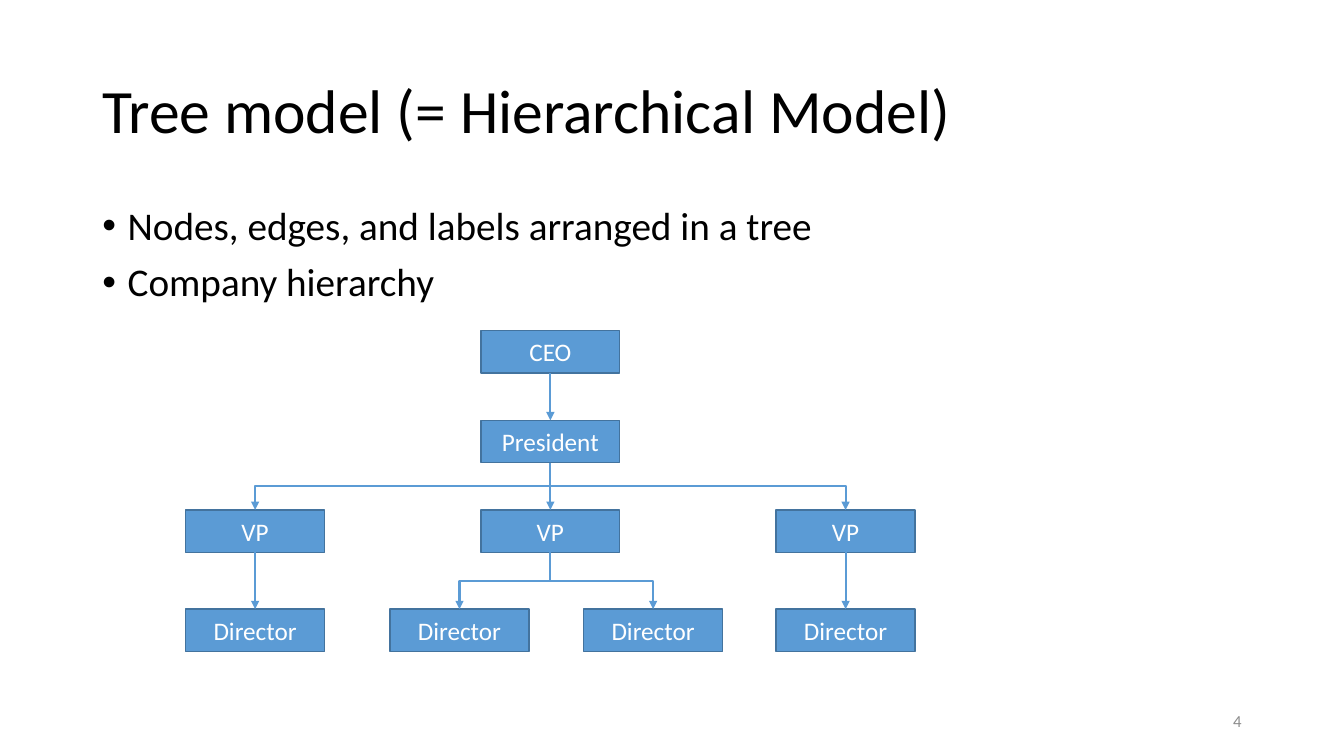
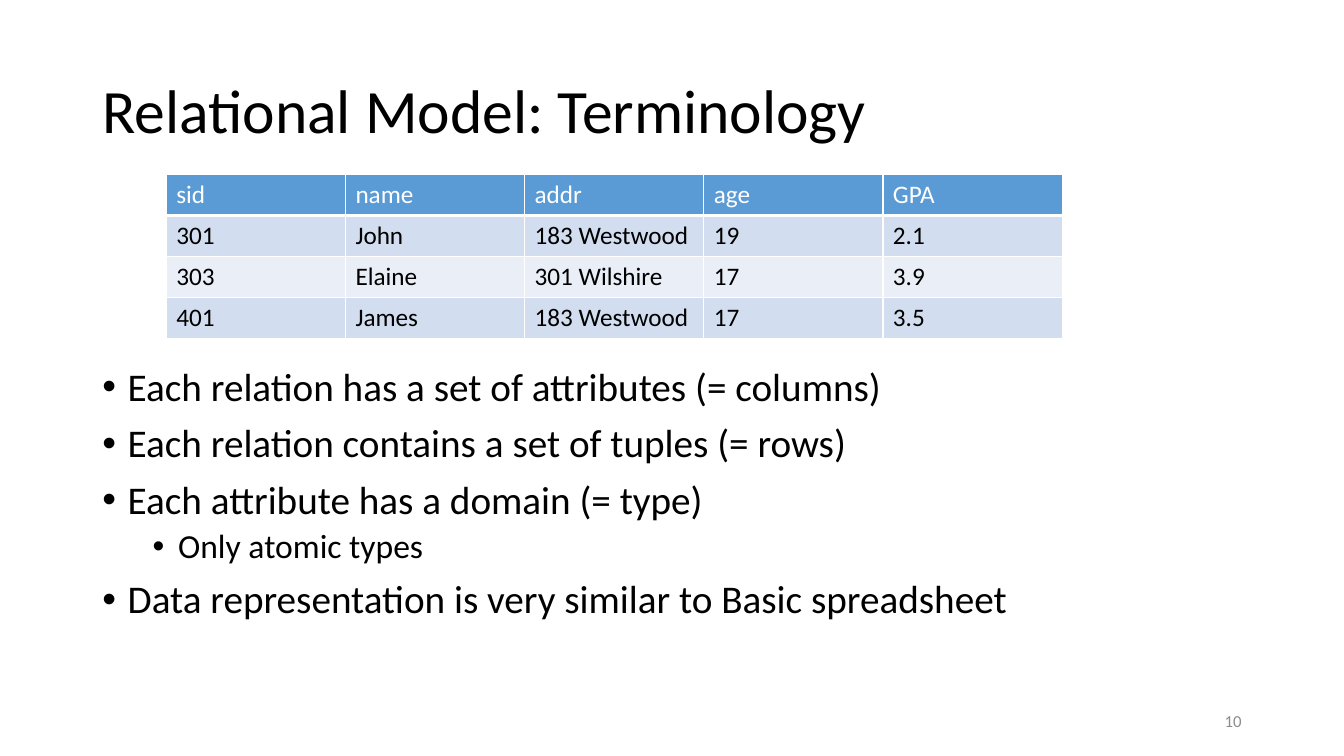
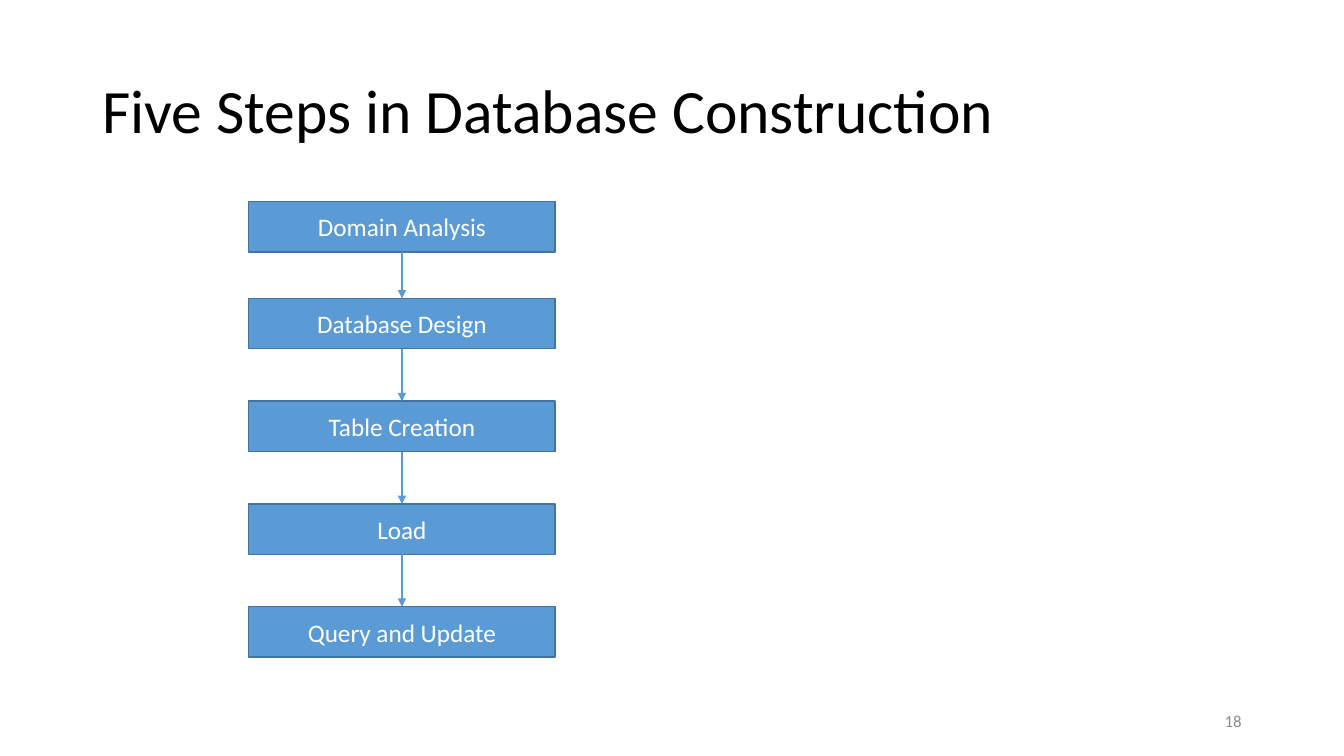
from lxml import etree
from pptx import Presentation
from pptx import util as u
from pptx.dml import color
from pptx.enum import shapes, text
from pptx.oxml import ns

HUES = {"ink": "000000", "blue": "5B9BD5", "edge": "43739E", "white": "FFFFFF",
        "gray": "8C8C8C", "band": "D2DEEF", "pale": "EAEFF7"}
FONT = "Calibri"


def put(para, words, size, hue):
    run = para.add_run()
    run.text = words
    run.font.name = FONT
    run.font.size = u.Pt(size)
    run.font.bold = False
    run.font.color.rgb = color.RGBColor.from_string(HUES[hue])


def add(node, tag, **attrs):
    return etree.SubElement(node, ns.qn(tag), **attrs)


deck = Presentation()
deck.slide_width, deck.slide_height = u.Cm(33.87), u.Cm(19.05)
LEFT, WIDE = u.Cm(2.33), u.Cm(29.21)

pages = [
    ("Tree model (= Hierarchical Model)", "4", 5.08, [
        (0, "Nodes, edges, and labels arranged in a tree"),
        (0, "Company hierarchy")]),
    ("Relational Model: Terminology", "10", 9.14, [
        (0, "Each relation has a set of attributes (= columns)"),
        (0, "Each relation contains a set of tuples (= rows)"),
        (0, "Each attribute has a domain (= type)"),
        (1, "Only atomic types"),
        (0, "Data representation is very similar to Basic spreadsheet")]),
    ("Five Steps in Database Construction", "18", 5.08, []),
]
for title, number, top, points in pages:
    slide = deck.slides.add_slide(deck.slide_layouts[6])
    head = slide.shapes.add_textbox(LEFT, u.Cm(1.02), WIDE, u.Cm(3.68)).text_frame
    head.word_wrap = True
    head.vertical_anchor = text.MSO_ANCHOR.MIDDLE
    head.paragraphs[0].line_spacing = 0.9
    put(head.paragraphs[0], title, 44, "ink")

    foot = slide.shapes.add_textbox(u.Cm(23.92), u.Cm(17.65), u.Cm(7.62), u.Cm(1.01)).text_frame
    foot.word_wrap = True
    foot.vertical_anchor = text.MSO_ANCHOR.MIDDLE
    foot.paragraphs[0].alignment = text.PP_ALIGN.RIGHT
    put(foot.paragraphs[0], number, 12, "gray")

    if points:
        body = slide.shapes.add_textbox(LEFT, u.Cm(top), WIDE, u.Cm(17.17 - top)).text_frame
        body.word_wrap = True
    for i, (level, words) in enumerate(points):
        para = body.add_paragraph() if i else body.paragraphs[0]
        para.level = level
        para.line_spacing = 0.9
        para.space_before = u.Pt(5 if level else 10)
        props = para._p.get_or_add_pPr()
        props.set("marL", str(u.Cm(0.64 + 1.27 * level)))
        props.set("indent", str(-u.Cm(0.64)))
        add(props, "a:buFont", typeface="Arial")
        add(props, "a:buChar", char="•")
        put(para, words, 24 if level else 28, "ink")

tree = [
    ("CEO", 13.87, 8.33, None),
    ("President", 13.87, 10.59, 0),
    ("VP", 6.43, 12.85, 1),
    ("VP", 13.87, 12.85, 1),
    ("VP", 21.31, 12.85, 1),
    ("Director", 6.43, 15.35, 2),
    ("Director", 11.58, 15.35, 3),
    ("Director", 16.46, 15.35, 3),
    ("Director", 21.31, 15.35, 4),
]
steps = [
    ("Domain Analysis", 10.13, 5.08, None),
    ("Database Design", 10.13, 7.52, 0),
    ("Table Creation", 10.13, 10.11, 1),
    ("Load", 10.13, 12.7, 2),
    ("Query and Update", 10.13, 15.29, 3),
]
for slide, nodes, wide, high in [(deck.slides[0], tree, 3.5, 1.07),
                                 (deck.slides[2], steps, 7.72, 1.27)]:
    boxes = []
    for words, mid, top, parent in nodes:
        box = slide.shapes.add_shape(shapes.MSO_SHAPE.RECTANGLE, u.Cm(mid - wide / 2),
                                     u.Cm(top), u.Cm(wide), u.Cm(high))
        box.shadow.inherit = False
        box.fill.solid()
        box.fill.fore_color.rgb = color.RGBColor.from_string(HUES["blue"])
        box.line.color.rgb = color.RGBColor.from_string(HUES["edge"])
        box.line.width = u.Pt(1)
        box.text_frame.vertical_anchor = text.MSO_ANCHOR.MIDDLE
        box.text_frame.paragraphs[0].alignment = text.PP_ALIGN.CENTER
        put(box.text_frame.paragraphs[0], words, 18, "white")
        boxes.append(box)
        if parent is None:
            continue

        boss = boxes[parent]
        start, end = boss.left + boss.width // 2, box.left + box.width // 2
        low = boss.top + boss.height
        if mid == nodes[parent][1]:
            link = slide.shapes.add_connector(shapes.MSO_CONNECTOR.STRAIGHT,
                                              start, low, end, box.top)
            link.begin_connect(boss, 2)
            link.end_connect(box, 0)
        else:
            side = 1 if end > start else -1
            midx, midy = (start + end) // 2, (low + box.top) // 2
            dx, dy = abs(end - start) // 2, (box.top - low) // 2
            link = slide.shapes.add_connector(shapes.MSO_CONNECTOR.ELBOW,
                                              midx + side * dy, midy - dx,
                                              midx - side * dy, midy + dx)
            turn = 270 if side > 0 else 90
            link._element.spPr.get_or_add_xfrm().set("rot", str(turn * 60000))
        link.line.color.rgb = color.RGBColor.from_string(HUES["blue"])
        link.line.width = u.Pt(1.5)
        add(link.line._get_or_add_ln(), "a:tailEnd", type="triangle")
        add(link._element.spPr, "a:effectLst")

rows = [
    ("sid", "name", "addr", "age", "GPA"),
    ("301", "John", "183 Westwood", "19", "2.1"),
    ("303", "Elaine", "301 Wilshire", "17", "3.9"),
    ("401", "James", "183 Westwood", "17", "3.5"),
]
grid = deck.slides[1].shapes.add_table(len(rows), len(rows[0]), u.Cm(4.19), u.Cm(4.4),
                                       u.Cm(22.58), u.Cm(4.12)).table
for r, row in enumerate(rows):
    for c, words in enumerate(row):
        cell = grid.cell(r, c)
        props = cell._tc.get_or_add_tcPr()
        for side in "LRTB":
            thick = 3 if r == 0 and side == "B" else 1
            line = add(props, "a:ln" + side, w=str(u.Pt(thick)))
            add(add(line, "a:solidFill"), "a:srgbClr", val=HUES["white"])
        cell.fill.solid()
        fill = "blue" if r == 0 else "band" if r % 2 else "pale"
        cell.fill.fore_color.rgb = color.RGBColor.from_string(HUES[fill])
        put(cell.text_frame.paragraphs[0], words, 18, "ink" if r else "white")

deck.save("out.pptx")
